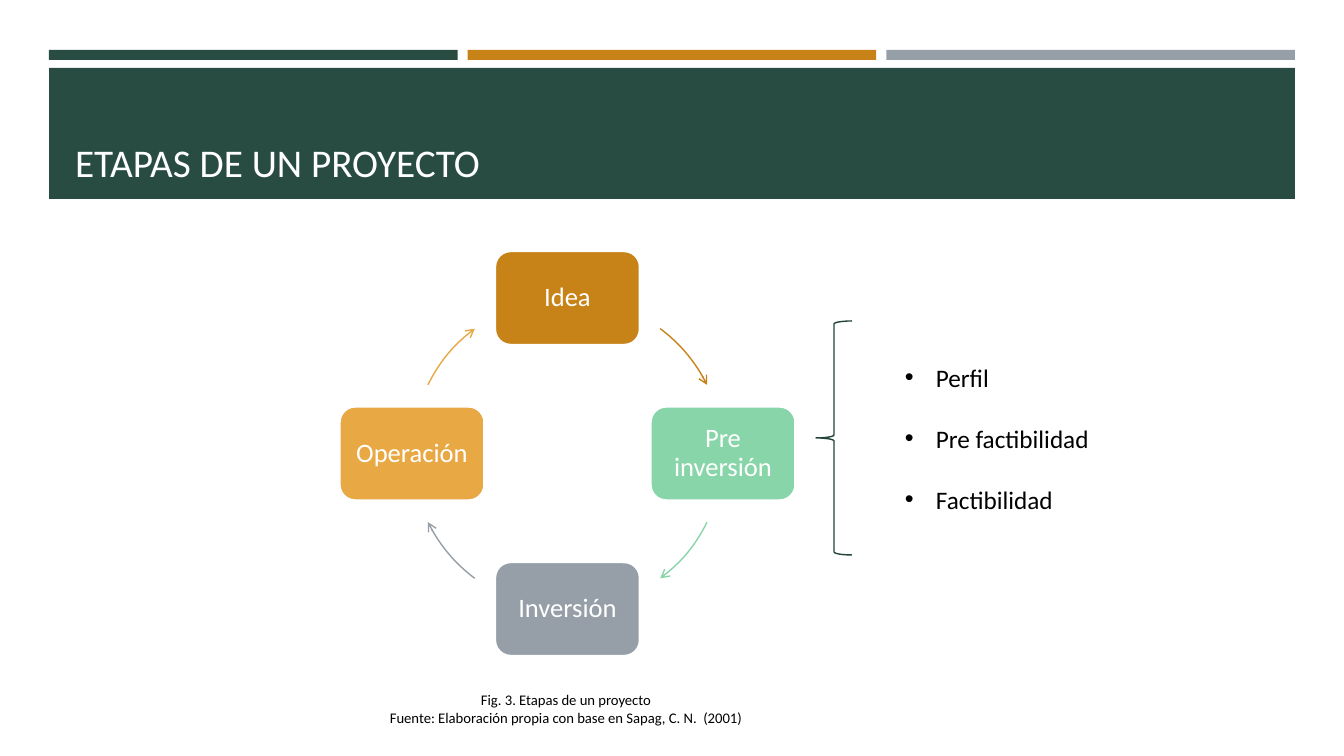
from pptx import Presentation
from pptx.dml.color import RGBColor
from pptx.enum.shapes import MSO_SHAPE
from pptx.enum.text import MSO_ANCHOR, MSO_AUTO_SIZE, PP_ALIGN
from pptx.oxml.ns import qn
from pptx.util import Pt
from lxml.etree import SubElement

W, H = 1344, 756
SCALE = 12192000 / W
FONT = "Calibri"
COLORS = {
    "green": "284C42", "ochre": "C88318", "gray": "969FA7", "mint": "88D5A9",
    "amber": "E8A844", "brace": "24443B", "white": "FFFFFF", "black": "000000",
}
STAGES = [("Idea", "ochre"), ("Pre inversión", "mint"),
          ("Inversión", "gray"), ("Operación", "amber")]
STUDIES = ["Perfil", "Pre factibilidad", "Factibilidad"]
CAPTION = ["Fig. 3. Etapas de un proyecto",
           "Fuente: Elaboración propia con base en Sapag, C. N.  (2001)"]


def px(n):
    """Turn px into EMU."""
    return round(n * SCALE)


def rgb(name):
    """Look up a colour by name."""
    return RGBColor.from_string(COLORS[name])


def add_shape(s, kind, box, fill=None, line=None, width=1):
    """Add a preset shape with an optional fill and line."""
    sp = s.shapes.add_shape(kind, *map(px, box))
    sp.shadow.inherit = False
    if fill:
        sp.fill.solid()
        sp.fill.fore_color.rgb = rgb(fill)
    else:
        sp.fill.background()
    if line:
        sp.line.color.rgb = rgb(line)
        sp.line.width = Pt(width)
    else:
        sp.line.fill.background()
    return sp


def write(sp, lines, size, color="black", align=PP_ALIGN.LEFT, anchor=MSO_ANCHOR.TOP,
          wrap=True, inset=None, spacing=None, before=0, bullet=0):
    """Write one paragraph per line and format the text."""
    tf = sp.text_frame
    tf.word_wrap = wrap
    tf.auto_size = MSO_AUTO_SIZE.NONE
    tf.vertical_anchor = anchor
    if inset is not None:
        tf.margin_left = tf.margin_right = tf.margin_top = tf.margin_bottom = px(inset)
    for i, text in enumerate(lines):
        p = tf.add_paragraph() if i else tf.paragraphs[0]
        p.alignment = align
        if spacing:
            p.line_spacing = spacing
        p.space_before = Pt(before if i else 0)
        r = p.add_run()
        r.text = text
        r.font.name, r.font.size = FONT, Pt(size)
        r.font.color.rgb = rgb(color)
        if bullet:
            pPr = p._p.get_or_add_pPr()
            pPr.set("marL", str(px(bullet)))
            pPr.set("indent", str(-px(bullet)))
            SubElement(pPr, qn("a:buFont")).set("typeface", "Arial")
            SubElement(pPr, qn("a:buChar")).set("char", "•")


def add_header(s, x, y, w, h):
    """Draw three bars over a band that holds the title."""
    gap, bar_h, band_y = 10, 10, 18
    bar_w = (w - 2 * gap) / 3
    for i, color in enumerate(("green", "ochre", "gray")):
        add_shape(s, MSO_SHAPE.RECTANGLE, (x + i * (bar_w + gap), y, bar_w, bar_h), color)
    band = add_shape(s, MSO_SHAPE.RECTANGLE, (x, y + band_y, w, h - band_y), "green")
    title = s.shapes.title
    band._element.addnext(title._element)
    title.left, title.top = px(x + 16), px(y + band_y + 10)
    title.width, title.height = px(w - 30), px(h - band_y - 19)
    write(title, ["ETAPAS DE UN PROYECTO"], 28, "white", anchor=MSO_ANCHOR.BOTTOM)


def add_cycle(s, x, y, d):
    """Place the stages on a ring of diameter d, with an arrow after each."""
    node_w, node_h = 145, 94
    half_sweep = 13.6
    r = d / 2
    spots = [(0, -1), (1, 0), (0, 1), (-1, 0)]
    middles = [320.2, 39.8, 140.2, 219.8]
    for (name, color), (dx, dy), middle in zip(STAGES, spots, middles):
        box = (x + r + dx * r - node_w / 2, y + r + dy * r - node_h / 2, node_w, node_h)
        node = add_shape(s, MSO_SHAPE.ROUNDED_RECTANGLE, box, color, "white", 1.75)
        write(node, [name], 19, "white", PP_ALIGN.CENTER, MSO_ANCHOR.MIDDLE,
              inset=12, spacing=0.9)
        arc = add_shape(s, MSO_SHAPE.ARC, (x, y, d, d), line=color)
        arc.adjustments[0] = (middle - half_sweep) * 0.6
        arc.adjustments[1] = (middle + half_sweep) * 0.6
        SubElement(arc.line._get_or_add_ln(), qn("a:tailEnd")).set("type", "arrow")


def add_studies(s, x, y, w, h):
    """Draw the brace and the list of studies beside it."""
    add_shape(s, MSO_SHAPE.LEFT_BRACE, (x, y, 36, h), line="brace")
    tb = s.shapes.add_textbox(px(x + 79), px(y + 36), px(w - 79), px(h - 71))
    write(tb, STUDIES, 18, before=22, bullet=31)


def add_caption(s, x, y, w, h):
    """Write the centred figure caption."""
    tb = s.shapes.add_textbox(*map(px, (x, y, w, h)))
    write(tb, CAPTION, 10.5, align=PP_ALIGN.CENTER, wrap=False)


def main():
    """Build and save the slide."""
    prs = Presentation()
    prs.slide_width, prs.slide_height = px(W), px(H)
    s = prs.slides.add_slide(prs.slide_layouts[5])
    add_header(s, 49, 50, 1246, 149)
    add_cycle(s, 412, 298, 311)
    add_studies(s, 816, 321, 307, 234)
    add_caption(s, 377, 686, 378, 45)
    prs.save("out.pptx")


if __name__ == "__main__":
    main()
